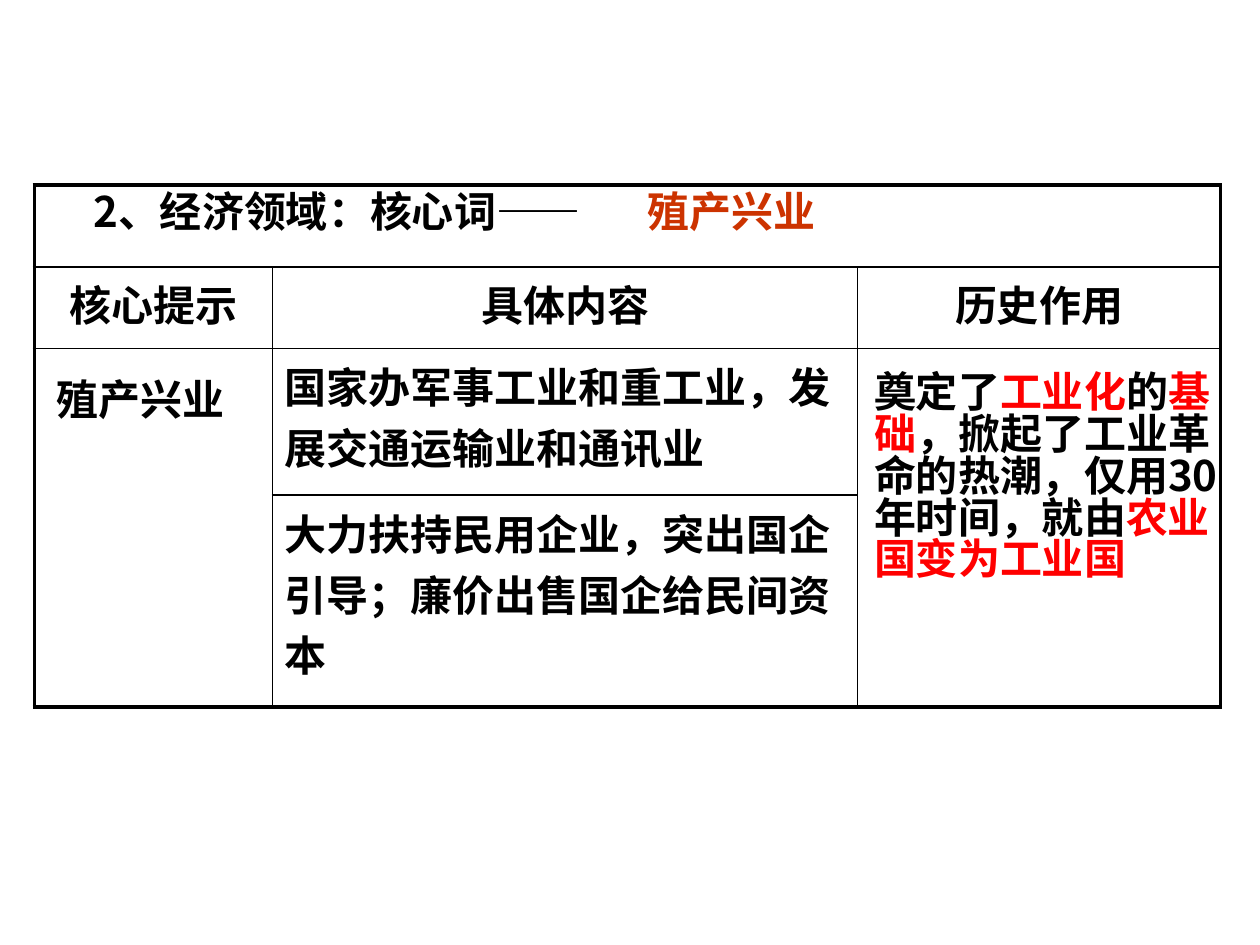
import pptx
import pptx.util
import pptx.dml.color
import pptx.enum.text
import pptx.oxml.ns
import lxml.etree

Cm, Pt = pptx.util.Cm, pptx.util.Pt
qn = pptx.oxml.ns.qn
COLORS = {"black": "000000", "red": "FF0000", "rust": "CC3300"}
FONT = "Noto Sans CJK SC"
CENTER = pptx.enum.text.PP_ALIGN.CENTER


def write(p, runs):
    """Fill a paragraph with (text, colour) runs in bold 24 pt."""
    p.font.name, p.font.size, p.font.bold = FONT, Pt(24), True
    props = p._p.pPr.find(qn("a:defRPr"))
    lxml.etree.SubElement(props, qn("a:ea"), typeface=FONT)
    for text, color in runs:
        r = p.add_run()
        r.text = text
        r.font.color.rgb = pptx.dml.color.RGBColor.from_string(COLORS[color])


def add_border(cell, side, width):
    """Draw one black edge of a table cell."""
    ln = lxml.etree.SubElement(cell._tc.get_or_add_tcPr(), qn(f"a:ln{side}"),
                               w=str(Pt(width)))
    fill = lxml.etree.SubElement(ln, qn("a:solidFill"))
    lxml.etree.SubElement(fill, qn("a:srgbClr"), val=COLORS["black"])


prs = pptx.Presentation()
prs.slide_width, prs.slide_height = Cm(25.4), Cm(19.05)
s = prs.slides.add_slide(prs.slide_layouts[6])

# Table grid
widths = [4.8, 11.8, 7.31]
heights = [1.65, 1.65, 2.95, 4.27]
rows, cols = len(heights), len(widths)
table = s.shapes.add_table(rows, cols, Cm(0.69), Cm(3.73),
                           Cm(sum(widths)), Cm(sum(heights))).table
table.first_row = table.horz_banding = False
for column, width in zip(table.columns, widths):
    column.width = Cm(width)
for row, height in zip(table.rows, heights):
    row.height = Cm(height)
for first, last in [((0, 0), (0, 2)), ((2, 0), (3, 0)), ((2, 2), (3, 2))]:
    table.cell(*first).merge(table.cell(*last))

# Borders: heavy around the table, thin inside
for i in range(rows):
    for j in range(cols):
        cell = table.cell(i, j)
        bottom, right = i + 1, j + 1
        if cell.is_merge_origin:
            bottom, right = i + cell.span_height, j + cell.span_width
        edges = {"L": j == 0, "R": right == cols, "T": i == 0, "B": bottom == rows}
        for side, outer in edges.items():
            if outer or not cell.is_spanned:
                add_border(cell, side, 2.25 if outer else 1)
        cell.fill.background()

# Table text
for j, header in enumerate(["核心提示", "具体内容", "历史作用"]):
    p = table.cell(1, j).text_frame.paragraphs[0]
    p.alignment = CENTER
    write(p, [(header, "black")])
contents = ["国家办军事工业和重工业，发展交通运输业和通讯业",
            "大力扶持民用企业，突出国企引导；廉价出售国企给民间资本"]
for i, content in enumerate(contents, start=2):
    write(table.cell(i, 1).text_frame.paragraphs[0], [(content, "black")])

# Text boxes over the merged cells: left, top, width, height, wrap, runs
effect = [("奠定了", "black"), ("工业化", "red"), ("的", "black"), ("基础", "red"),
          ("，掀起了工业革命的热潮，仅用30年时间，就由", "black"),
          ("农业国变为工业国", "red")]
boxes = [
    (17.37, 7.42, 7.44, 5.38, True, effect),
    (1.63, 3.79, 17.48, 1.27, True, [("2、经济领域：核心词——", "black")]),
    (0.89, 7.57, 4.24, 1.27, True, [("殖产兴业", "black")]),
    (12.8, 3.79, 3.91, 1.27, False, [("殖产兴业", "rust")]),
]
for left, top, width, height, wrap, runs in boxes:
    tf = s.shapes.add_textbox(Cm(left), Cm(top), Cm(width), Cm(height)).text_frame
    tf.word_wrap = wrap
    p = tf.paragraphs[0]
    p.line_spacing = 0.83
    write(p, runs)

prs.save("out.pptx")
